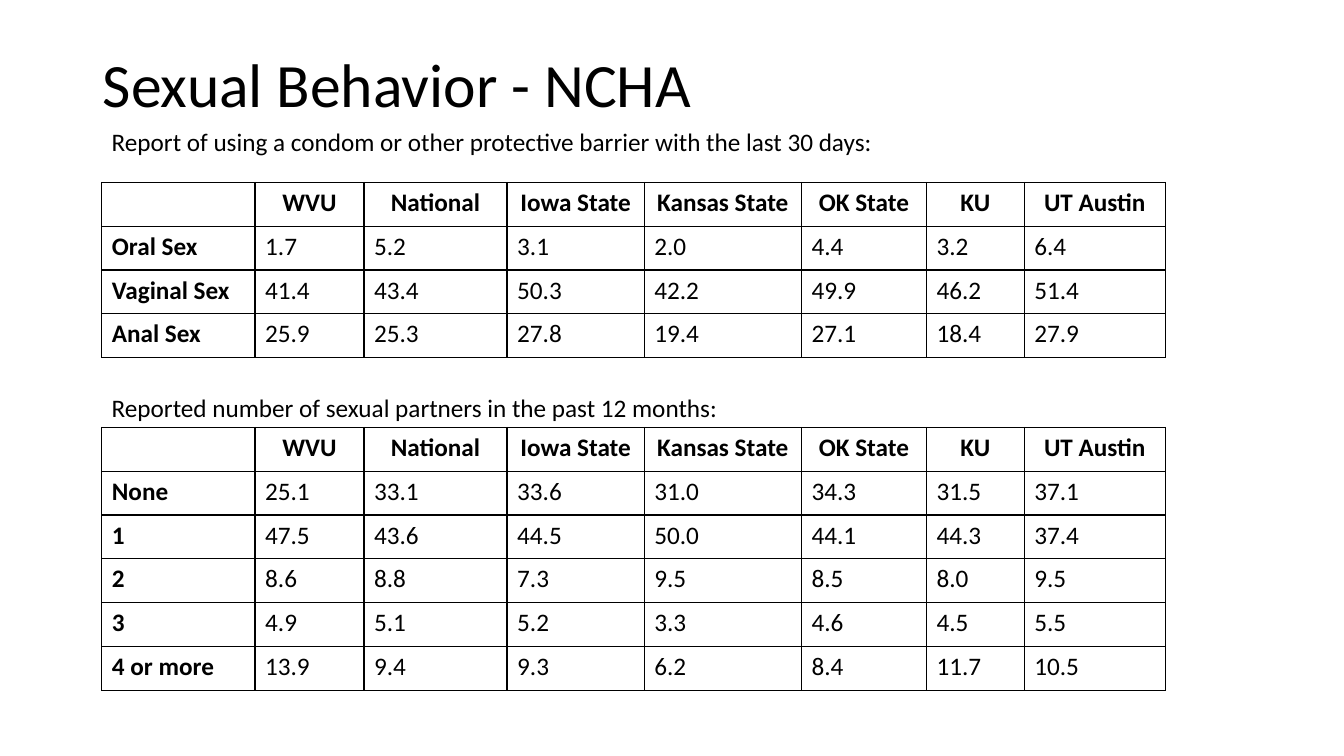
from dataclasses import dataclass

from lxml import etree
from pptx import Presentation
from pptx import util as u
from pptx.dml.color import RGBColor
from pptx.enum import text
from pptx.oxml import ns


@dataclass(frozen=True)
class Theme:
    font: str = "Calibri"
    ink: str = "000000"
    title_size: int = 44
    body_size: int = 18
    border_width: int = 1


THEME = Theme()
LEFT = 1.01
ROW_HEIGHT = 0.435
COLUMN_WIDTHS = [1.52, 1.08, 1.42, 1.36, 1.56, 1.24, 0.97, 1.4]
SCHOOLS = ["WVU", "National", "Iowa State", "Kansas State", "OK State", "KU", "UT Austin"]
PROTECTION = {
    "Oral Sex": [1.7, 5.2, 3.1, 2.0, 4.4, 3.2, 6.4],
    "Vaginal Sex": [41.4, 43.4, 50.3, 42.2, 49.9, 46.2, 51.4],
    "Anal Sex": [25.9, 25.3, 27.8, 19.4, 27.1, 18.4, 27.9],
}
PARTNERS = {
    "None": [25.1, 33.1, 33.6, 31.0, 34.3, 31.5, 37.1],
    "1": [47.5, 43.6, 44.5, 50.0, 44.1, 44.3, 37.4],
    "2": [8.6, 8.8, 7.3, 9.5, 8.5, 8.0, 9.5],
    "3": [4.9, 5.1, 5.2, 3.3, 4.6, 4.5, 5.5],
    "4 or more": [13.9, 9.4, 9.3, 6.2, 8.4, 11.7, 10.5],
}


def add_span(para, wording, size=THEME.body_size, bold=False):
    span = para.add_run()
    span.text = wording
    span.font.name = THEME.font
    span.font.size = u.Pt(size)
    span.font.bold = bold
    span.font.color.rgb = RGBColor.from_string(THEME.ink)


def set_title(page, wording):
    title = page.shapes.title
    title.left, title.top = u.Inches(0.92), u.Inches(0.14)
    title.width, title.height = u.Inches(11.5), u.Inches(1.45)
    frame = title.text_frame
    frame.auto_size = text.MSO_AUTO_SIZE.NONE
    frame.vertical_anchor = text.MSO_ANCHOR.MIDDLE
    para = frame.paragraphs[0]
    para.alignment = text.PP_ALIGN.LEFT
    para.line_spacing = 0.9
    add_span(para, wording, THEME.title_size)


def add_caption(page, top, wording):
    box = page.shapes.add_textbox(u.Inches(LEFT), u.Inches(top), u.Inches(8.92), u.Inches(0.4))
    frame = box.text_frame
    frame.word_wrap = True
    frame.auto_size = text.MSO_AUTO_SIZE.SHAPE_TO_FIT_TEXT
    add_span(frame.paragraphs[0], wording)


def style_cell(cell):
    properties = cell._tc.get_or_add_tcPr()
    for side in ("a:lnL", "a:lnR", "a:lnT", "a:lnB"):
        line = etree.SubElement(properties, ns.qn(side), w=str(u.Pt(THEME.border_width)))
        fill = etree.SubElement(line, ns.qn("a:solidFill"))
        etree.SubElement(fill, ns.qn("a:srgbClr"), val=THEME.ink)
    cell.fill.background()


def add_data_table(page, top, data):
    rows = [["", *SCHOOLS]]
    rows += [[label, *(f"{value:.1f}" for value in values)] for label, values in data.items()]
    table = page.shapes.add_table(
        len(rows), len(COLUMN_WIDTHS), u.Inches(LEFT), u.Inches(top),
        u.Inches(sum(COLUMN_WIDTHS)), u.Inches(ROW_HEIGHT * len(rows)),
    ).table
    table.first_row = False
    table.horz_banding = False
    for column, width in zip(table.columns, COLUMN_WIDTHS):
        column.width = u.Inches(width)
    for row_index, row in enumerate(rows):
        for column_index, wording in enumerate(row):
            cell = table.cell(row_index, column_index)
            style_cell(cell)
            para = cell.text_frame.paragraphs[0]
            if row_index == 0:
                para.alignment = text.PP_ALIGN.CENTER
            if wording:
                add_span(para, wording, bold=row_index == 0 or column_index == 0)


def main():
    deck = Presentation()
    deck.slide_width, deck.slide_height = u.Inches(13.33), u.Inches(7.5)
    page = deck.slides.add_slide(deck.slide_layouts.get_by_name("Title Only"))
    set_title(page, "Sexual Behavior - NCHA")
    add_caption(page, 1.2, "Report of using a condom or other protective barrier with the last 30 days:")
    add_data_table(page, 1.81, PROTECTION)
    add_data_table(page, 4.24, PARTNERS)
    add_caption(page, 3.84, "Reported number of sexual partners in the past 12 months:")
    deck.save("out.pptx")


if __name__ == "__main__":
    main()
